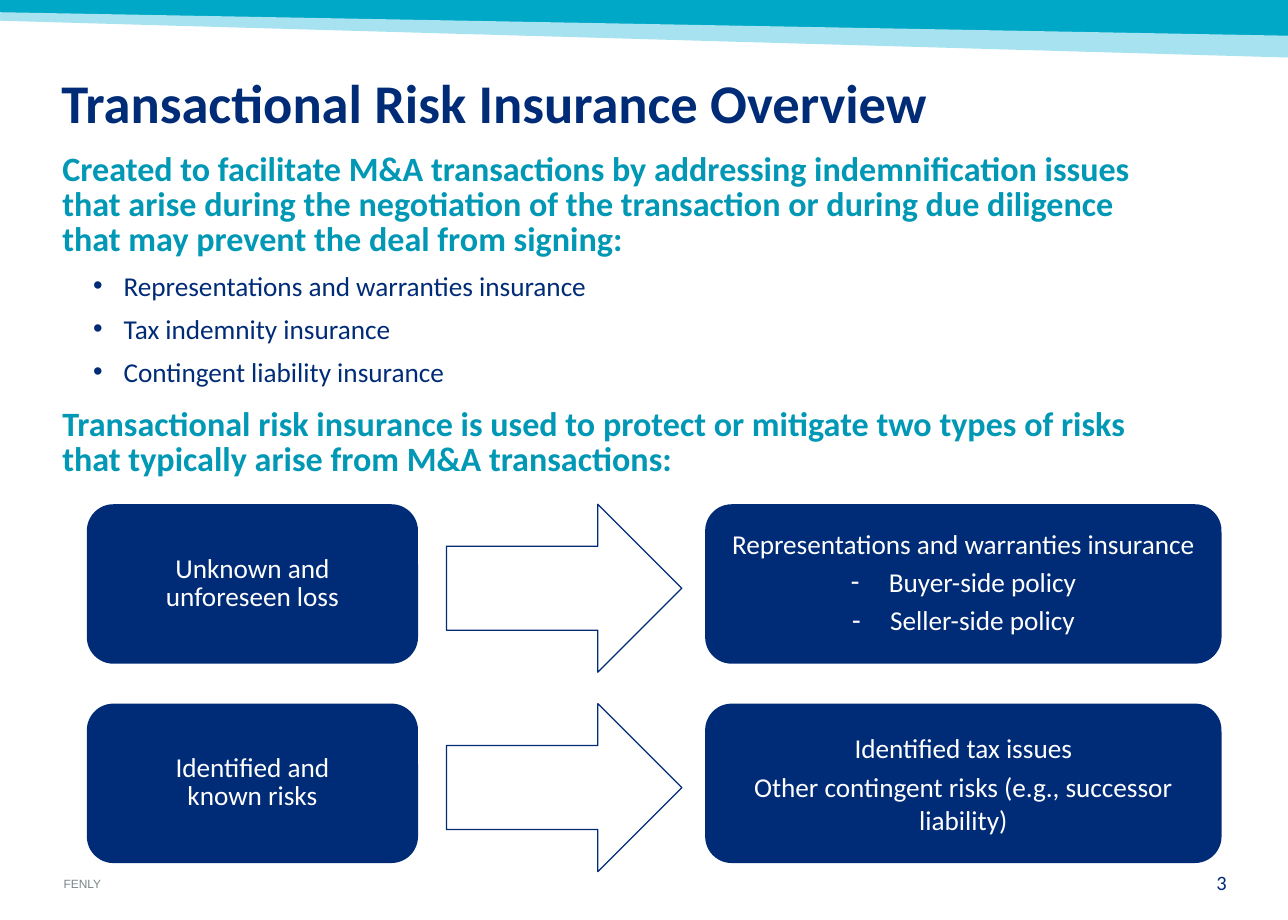
from pptx import Presentation
from pptx.util import Pt
from pptx.dml.color import RGBColor as RGB
from pptx.enum.shapes import MSO_SHAPE as Kind
from pptx.enum.text import PP_ALIGN as Align, MSO_ANCHOR as Anchor
from lxml.etree import SubElement
from pptx.oxml.ns import qn

NAVY = RGB(0x00, 0x2C, 0x77)
TEAL = RGB(0x00, 0x98, 0xB5)
CYAN = RGB(0x00, 0xA8, 0xC8)
PALE = RGB(0xA6, 0xE2, 0xEF)
GRAY = RGB(0x7C, 0x84, 0x8A)
WHITE = RGB(0xFF, 0xFF, 0xFF)
WIDE, HIGH = 756, 540


def write(frame, text, size=16, color=NAVY, bold=False, font="Calibri",
          align=Align.LEFT, line=None, before=0, after=0, mark=None, indent=0, hang=0):
    """Add one paragraph, filling the frame's empty first one if there is one."""
    para = frame.paragraphs[-1]
    if para.runs:
        para = frame.add_paragraph()
    para.text = text
    para.alignment = align
    if line:
        para.line_spacing = line
    para.space_before, para.space_after = Pt(before), Pt(after)
    for run in para.runs:
        run.font.size, run.font.bold, run.font.name = Pt(size), bold, font
        run.font.color.rgb = color
    if mark:
        props = para._p.get_or_add_pPr()
        props.set("marL", str(Pt(indent)))
        props.set("indent", str(-Pt(hang)))
        SubElement(props, qn("a:buFont"), typeface="Arial")
        SubElement(props, qn("a:buChar"), char=mark)


def add_text(slide, box, inset=(0, 0, 0, 0), wrap=True, anchor=Anchor.TOP):
    frame = slide.shapes.add_textbox(*map(Pt, box)).text_frame
    frame.margin_left, frame.margin_top, frame.margin_right, frame.margin_bottom = map(Pt, inset)
    frame.word_wrap, frame.vertical_anchor = wrap, anchor
    return frame


def add_band(slide, points, color):
    first, *rest = [(Pt(x), Pt(y)) for x, y in points]
    maker = slide.shapes.build_freeform(*first)
    maker.add_line_segments(rest, close=True)
    band = maker.convert_to_shape()
    band.shadow.inherit = False
    band.fill.solid()
    band.fill.fore_color.rgb = color
    band.line.fill.background()


def add_card(slide, box):
    card = slide.shapes.add_shape(Kind.FLOWCHART_ALTERNATE_PROCESS, *map(Pt, box))
    card.shadow.inherit = False
    card.fill.solid()
    card.fill.fore_color.rgb = NAVY
    card.line.fill.background()
    card.text_frame.word_wrap = True
    card.text_frame.vertical_anchor = Anchor.MIDDLE
    return card.text_frame


def add_arrow(slide, box):
    arrow = slide.shapes.add_shape(Kind.RIGHT_ARROW, *map(Pt, box))
    arrow.shadow.inherit = False
    arrow.fill.background()
    arrow.line.color.rgb = NAVY
    arrow.line.width = Pt(0.75)


def add_frame(slide, wide, high):
    """Place the top bands, the footer name and the page number."""
    add_band(slide, [(0, 0), (wide, 0), (wide, 23), (0, 8.6)], CYAN)
    add_band(slide, [(0, 7.2), (wide, 21), (wide, 33.8), (0, 12.2)], PALE)
    foot = add_text(slide, (37.4, high - 25.2, 227.5, 8), wrap=False, anchor=Anchor.BOTTOM)
    write(foot, "FENLY", size=7, color=GRAY, font="Arial")
    page = add_text(slide, (wide - 71.3, high - 29.5, 35.3, 14.4))
    write(page, "3", size=12, align=Align.RIGHT)


def add_title(slide, box):
    frame = add_text(slide, box, inset=(0, 3.6, 7.2, 3.6))
    write(frame, "Transactional Risk Insurance Overview", size=32, bold=True, line=0.83)


def add_body(slide, box):
    frame = add_text(slide, box, inset=(7.2, 3.6, 7.2, 3.6))
    lead = dict(size=20, color=TEAL, bold=True, line=0.86)
    write(frame, "Created to facilitate M&A transactions by addressing indemnification issues "
          "that arise during the negotiation of the transaction or during due diligence "
          "that may prevent the deal from signing:", after=6, **lead)
    for text, gap in (("Representations and warranties insurance", 6),
                      ("Tax indemnity insurance", 6),
                      ("Contingent liability insurance", 12)):
        write(frame, text, after=gap, mark="•", indent=36, hang=18)
    write(frame, "Transactional risk insurance is used to protect or mitigate two types of risks "
          "that typically arise from M&A transactions:", **lead)


def add_risk(slide, box, risk, covers):
    """Place a risk card, an arrow and the card of covers side by side."""
    left, top, wide, high = box
    base = dict(color=WHITE, align=Align.CENTER)
    write(add_card(slide, (left, top, 194.4, high)), risk, line=0.86, **base)
    add_arrow(slide, (left + 211, top, 138.2, 98.6))
    frame = add_card(slide, (left + wide - 303.1, top, 303.1, high))
    for text, style in covers:
        write(frame, text, **base, **style)


def main():
    deck = Presentation()
    deck.slide_width, deck.slide_height = Pt(WIDE), Pt(HIGH)
    slide = deck.slides.add_slide(deck.slide_layouts[6])
    add_frame(slide, WIDE, HIGH)
    add_title(slide, (36, 43.2, 684, 54.7))
    add_body(slide, (29.5, 86.4, 653.8, 200.2))
    item = dict(line=0.86, before=6, mark="-", indent=22.5, hang=22.5)
    loose = dict(before=2, after=2)
    risks = [
        ("Unknown and\nunforeseen loss",
         [("Representations and warranties insurance", dict(line=0.86)),
          ("Buyer-side policy", item), ("Seller-side policy", item)]),
        ("Identified and\nknown risks",
         [("Identified tax issues", loose),
          ("Other contingent risks (e.g., successor liability)", loose)]),
    ]
    for row, (risk, covers) in enumerate(risks):
        add_risk(slide, (51, 296 + row * 117, 666, 93.6), risk, covers)
    deck.save("out.pptx")


if __name__ == "__main__":
    main()
